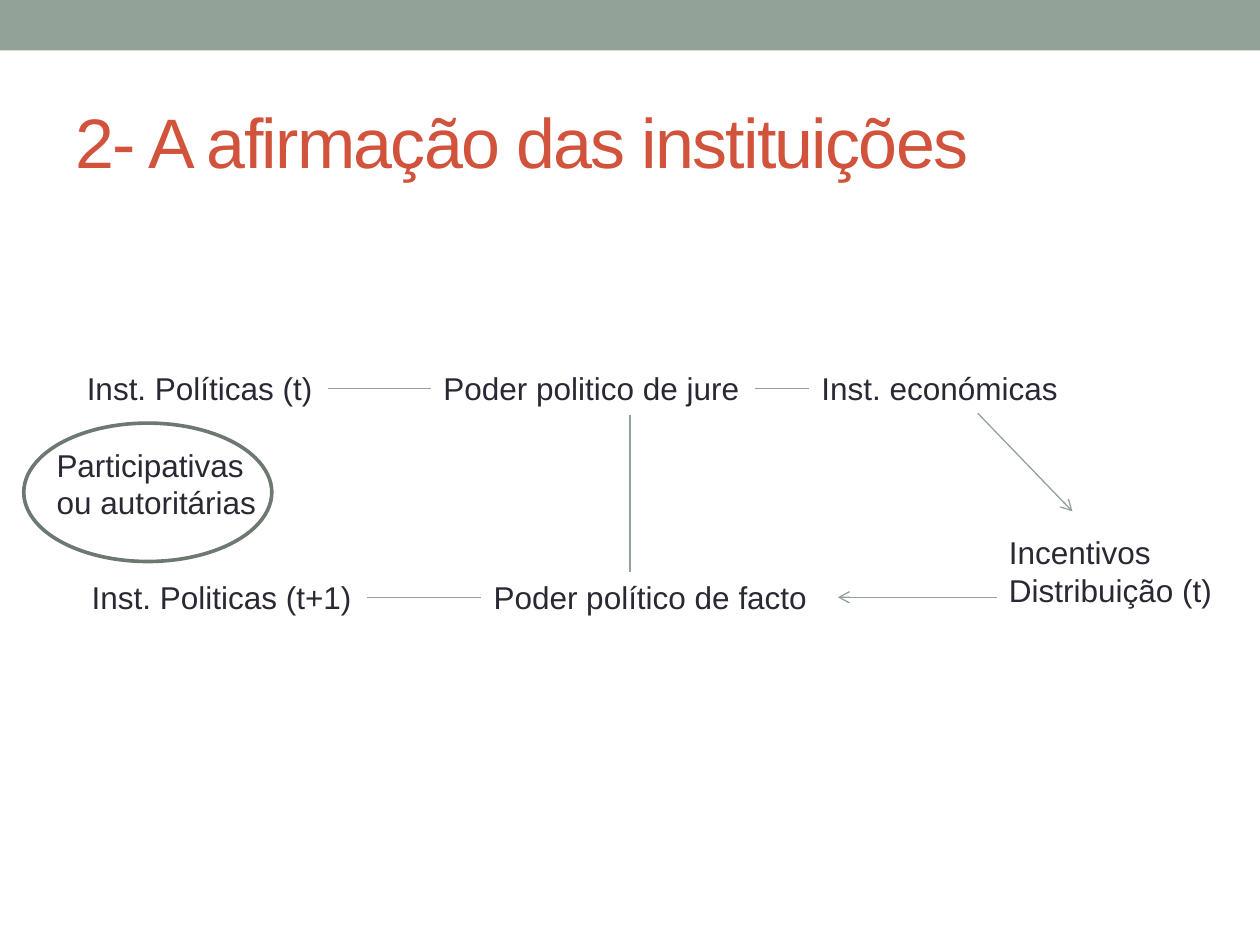
from dataclasses import dataclass

from lxml import etree
from pptx import Presentation
from pptx.dml.color import RGBColor
from pptx.enum.shapes import MSO_CONNECTOR, MSO_SHAPE
from pptx.enum.text import MSO_ANCHOR, MSO_AUTO_SIZE, PP_ALIGN
from pptx.oxml.ns import qn
from pptx.util import Cm, Pt

STRAIGHT = MSO_CONNECTOR.STRAIGHT
RECTANGLE, OVAL = MSO_SHAPE.RECTANGLE, MSO_SHAPE.OVAL
MIDDLE = MSO_ANCHOR.MIDDLE
NO_FIT, GROW = MSO_AUTO_SIZE.NONE, MSO_AUTO_SIZE.SHAPE_TO_FIT_TEXT
LEFT = PP_ALIGN.LEFT
LEFT_SIDE, RIGHT_SIDE = 1, 3


@dataclass(frozen=True)
class Theme:
    """Colours, font and sizes shared by the whole slide."""

    font: str = "Arial"
    sage: RGBColor = RGBColor(0x93, 0xA2, 0x99)
    outline: RGBColor = RGBColor(0x6D, 0x78, 0x71)
    ink: RGBColor = RGBColor(0x29, 0x29, 0x34)
    accent: RGBColor = RGBColor(0xD2, 0x53, 0x3C)
    title_size: Pt = Pt(40)
    body_size: Pt = Pt(18)
    link_width: Pt = Pt(0.75)
    outline_width: Pt = Pt(2.08)


THEME = Theme()
TOP_ROW, BOTTOM_ROW = 7.32, 11.53
LINE_HEIGHT, TWO_LINES = 1.02, 1.8
LABELS = {
    "politics": (["Inst. Políticas (t)"], 1.5, TOP_ROW, 5.11, LINE_HEIGHT),
    "de_jure": (["Poder politico de jure"], 8.69, TOP_ROW, 6.53, LINE_HEIGHT),
    "economics": (["Inst. económicas"], 16.31, TOP_ROW, 5.33, LINE_HEIGHT),
    "incentives": (["Incentivos", "Distribuição (t)"], 20.09, 10.62, 4.65, TWO_LINES),
    "de_facto": (["Poder político de facto"], 9.7, BOTTOM_ROW, 6.88, LINE_HEIGHT),
    "next_politics": (["Inst. Politicas (t+1)"], 1.6, BOTTOM_ROW, 5.79, LINE_HEIGHT),
    "regimes": (["Participativas", "ou autoritárias"], 0.89, 8.86, 4.57, TWO_LINES),
}
JOINS = [("politics", "de_jure"), ("de_jure", "economics"), ("next_politics", "de_facto")]
ARROWS = [(19.71, 8.33, 21.62, 10.31), (20.09, 12.04, 16.89, 12.04)]
POWER_LINK = (12.7, 8.36, 12.7, BOTTOM_ROW)


def apply(target, values):
    """Set every attribute named in a dict of format values."""
    for name, value in values.items():
        setattr(target, name, value)


def write(frame, lines, size, color):
    """Write one formatted paragraph for each line and return the spans."""
    spans = []
    for index, line in enumerate(lines):
        para = frame.add_paragraph() if index else frame.paragraphs[0]
        para.alignment = LEFT
        span = para.add_run()
        span.text = line
        apply(span.font, {"name": THEME.font, "size": size})
        span.font.color.rgb = color
        spans.append(span)
    return spans


def format_title(slide, text):
    """Place the title placeholder and fill it with tightly spaced text."""
    title = slide.shapes.title
    apply(title, {"left": Cm(1.27), "top": Cm(1.47), "width": Cm(22.86), "height": Cm(2.74)})
    apply(title.text_frame, {"vertical_anchor": MIDDLE, "auto_size": NO_FIT, "word_wrap": True})
    for span in write(title.text_frame, [text], THEME.title_size, THEME.accent):
        span.font._element.set("spc", "-100")


def add_label(slide, lines, *place):
    """Add an unwrapped text box."""
    box = slide.shapes.add_textbox(*map(Cm, place))
    apply(box.text_frame, {"word_wrap": False, "auto_size": GROW})
    write(box.text_frame, lines, THEME.body_size, THEME.ink)
    return box


def add_band(slide, *place):
    """Add a filled band without an outline."""
    band = slide.shapes.add_shape(RECTANGLE, *map(Cm, place))
    band.shadow.inherit = False
    band.fill.solid()
    band.fill.fore_color.rgb = THEME.sage
    band.line.fill.background()


def add_ring(slide, *place):
    """Add an unfilled ellipse."""
    ring = slide.shapes.add_shape(OVAL, *map(Cm, place))
    ring.shadow.inherit = False
    ring.fill.background()
    ring.line.color.rgb = THEME.outline
    ring.line.width = THEME.outline_width


def add_link(slide, ends=(0, 0, 0, 0), arrow=False):
    """Add a thin straight connector, with an arrowhead if asked."""
    link = slide.shapes.add_connector(STRAIGHT, *map(Cm, ends))
    link.line.color.rgb = THEME.sage
    link.line.width = THEME.link_width
    if arrow:
        etree.SubElement(link.line._get_or_add_ln(), qn("a:tailEnd"), type="arrow")
    etree.SubElement(link._element.spPr, qn("a:effectLst"))
    return link


def join(slide, first, second):
    """Link the right side of one box to the left side of the next."""
    link = add_link(slide)
    link.begin_connect(first, RIGHT_SIDE)
    link.end_connect(second, LEFT_SIDE)


def main():
    """Build the slide and save it."""
    deck = Presentation()
    apply(deck, {"slide_width": Cm(25.4), "slide_height": Cm(19.05)})
    slide = deck.slides.add_slide(deck.slide_layouts[5])
    add_band(slide, 0, 0, 25.4, 1.02)
    format_title(slide, "2- A afirmação das instituições")
    boxes = {name: add_label(slide, *label) for name, label in LABELS.items()}
    for first, second in JOINS:
        join(slide, boxes[first], boxes[second])
    for ends in ARROWS:
        add_link(slide, ends, arrow=True)
    add_link(slide, POWER_LINK)
    add_ring(slide, 0.48, 8.53, 5, 2.79)
    deck.save("out.pptx")


if __name__ == "__main__":
    main()
